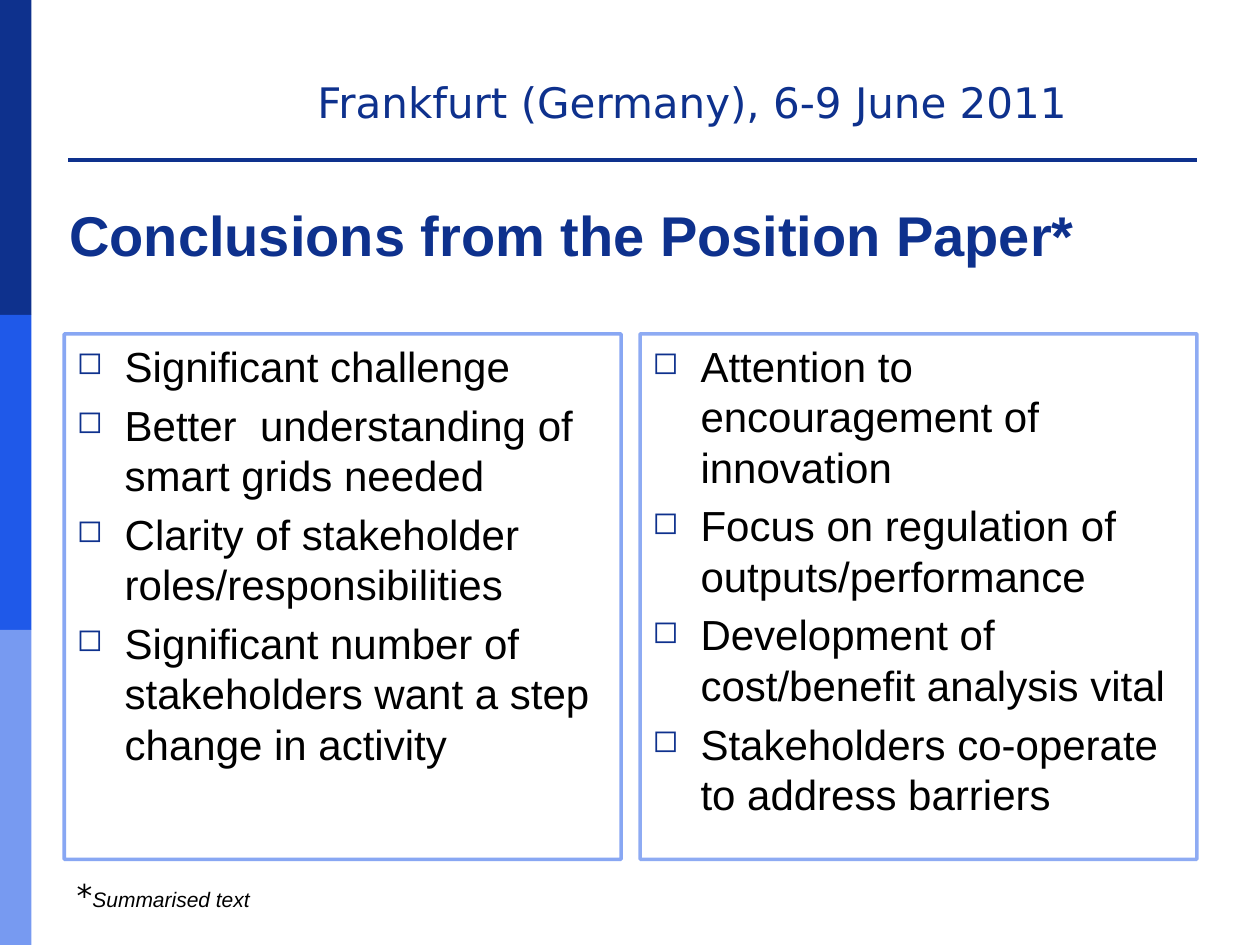
import dataclasses
import typing

import lxml.etree
import pptx
import pptx.dml.color
import pptx.enum.shapes
import pptx.enum.text
import pptx.oxml.ns
import pptx.util

WIDTH, HEIGHT = 10, 7.5
NAVY, BLUE, SKY, BLACK = "0E318D", "1F59E9", "779AF1", "000000"
SANS, WIDE, SYMBOL = "Arial", "DejaVu Sans", "OpenSymbol"
BAR_WIDTH = WIDTH / 40
LEFT, GUTTER = 0.51, 0.15
PANEL_TOP, PANEL_WIDTH, PANEL_HEIGHT = 2.65, 4.42, 4.17
INDENT = 0.38


@dataclasses.dataclass
class Box:
    left: float
    top: float
    width: float
    height: float

    def emu(self) -> list[int]:
        return [pptx.util.Inches(v) for v in dataclasses.astuple(self)]


@dataclasses.dataclass
class Run:
    text: str
    size: float
    font: str = SANS
    color: str = BLACK
    bold: bool = False
    italic: bool = False


@dataclasses.dataclass
class Panel:
    column: int
    opacity: int
    items: list[str]


PANELS = [
    Panel(0, 52, [
        "Significant challenge",
        "Better  understanding of smart grids needed",
        "Clarity of stakeholder roles/responsibilities",
        "Significant number of stakeholders want a step change in activity",
    ]),
    Panel(1, 50, [
        "Attention to encouragement of innovation",
        "Focus on regulation of outputs/performance",
        "Development of cost/benefit analysis vital",
        "Stakeholders co-operate to address barriers",
    ]),
]


def rgb(color: str) -> pptx.dml.color.RGBColor:
    return pptx.dml.color.RGBColor.from_string(color)


def add_xml(parent: typing.Any, tag: str, **attrs: str) -> typing.Any:
    return lxml.etree.SubElement(parent, pptx.oxml.ns.qn(tag), attrs)


def add_run(p: typing.Any, run: Run) -> None:
    r = p.add_run()
    r.text = run.text
    r.font.size = pptx.util.Pt(run.size)
    r.font.name = run.font
    r.font.color.rgb = rgb(run.color)
    r.font.bold, r.font.italic = run.bold, run.italic


def place(sp: typing.Any, box: Box) -> None:
    sp.left, sp.top, sp.width, sp.height = box.emu()


def add_bar(s: typing.Any, row: int, color: str) -> None:
    box = Box(0, row * HEIGHT / 3, BAR_WIDTH, HEIGHT / 3)
    sp = s.shapes.add_shape(pptx.enum.shapes.MSO_SHAPE.RECTANGLE, *box.emu())
    sp.shadow.inherit = False
    sp.fill.solid()
    sp.fill.fore_color.rgb = rgb(color)
    sp.line.fill.background()


def add_rule_table(s: typing.Any, box: Box) -> None:
    """Add a one-cell table that shows only its bottom border."""
    table = s.shapes.add_table(1, 1, *box.emu()).table
    table.first_row = table.horz_banding = False
    cell = table.cell(0, 0)
    cell.margin_top = cell.margin_bottom = 0
    add_xml(cell.text_frame.paragraphs[0]._p, "a:endParaRPr", sz="800")
    tcPr = cell._tc.get_or_add_tcPr()
    for side in ("L", "R", "T"):
        add_xml(add_xml(tcPr, f"a:ln{side}", w="0"), "a:noFill")
    bottom = add_xml(tcPr, "a:lnB", w=str(pptx.util.Pt(2.25)))
    add_xml(add_xml(bottom, "a:solidFill"), "a:srgbClr", val=NAVY)
    cell.fill.background()


def add_text(s: typing.Any, box: Box, runs: list[Run]) -> None:
    tf = s.shapes.add_textbox(*box.emu()).text_frame
    tf.word_wrap = True
    tf.auto_size = pptx.enum.text.MSO_AUTO_SIZE.SHAPE_TO_FIT_TEXT
    for run in runs:
        add_run(tf.paragraphs[0], run)


def fill_title(sp: typing.Any, box: Box, run: Run) -> None:
    place(sp, box)
    tf = sp.text_frame
    tf.auto_size = pptx.enum.text.MSO_AUTO_SIZE.NONE
    tf.vertical_anchor = pptx.enum.text.MSO_ANCHOR.MIDDLE
    p = tf.paragraphs[0]
    p.alignment = pptx.enum.text.PP_ALIGN.LEFT
    add_run(p, run)


def add_bullet(p: typing.Any) -> None:
    pPr = p._p.get_or_add_pPr()
    pPr.set("marL", str(pptx.util.Inches(INDENT)))
    pPr.set("indent", str(-pptx.util.Inches(INDENT)))
    add_xml(add_xml(pPr, "a:buClr"), "a:srgbClr", val=NAVY)
    add_xml(pPr, "a:buSzPct", val="75000")
    add_xml(pPr, "a:buFont", typeface=SYMBOL)
    add_xml(pPr, "a:buChar", char="◻")


def fill_panel(sp: typing.Any, panel: Panel) -> None:
    left = LEFT + panel.column * (PANEL_WIDTH + GUTTER)
    place(sp, Box(left, PANEL_TOP, PANEL_WIDTH, PANEL_HEIGHT))
    sp.line.color.rgb = rgb(BLUE)
    sp.line.width = pptx.util.Pt(2)
    color = sp.line._ln.find(".//" + pptx.oxml.ns.qn("a:srgbClr"))
    add_xml(color, "a:alpha", val=str(panel.opacity * 1000))
    tf = sp.text_frame
    tf.auto_size = pptx.enum.text.MSO_AUTO_SIZE.NONE
    for i, item in enumerate(panel.items):
        p = tf.add_paragraph() if i else tf.paragraphs[0]
        add_bullet(p)
        p.space_before = pptx.util.Pt(4.8 if i else 0)
        add_run(p, Run(item, 24))


def main() -> None:
    prs = pptx.Presentation()
    prs.slide_width = pptx.util.Inches(WIDTH)
    prs.slide_height = pptx.util.Inches(HEIGHT)
    s = prs.slides.add_slide(prs.slide_layouts[3])
    title, *bodies = s.placeholders

    for row, color in enumerate((NAVY, BLUE, SKY)):
        add_bar(s, row, color)
    add_rule_table(s, Box(0.54, 1.07, 8.96, 0.2))
    add_text(s, Box(2.42, 0.56, 6.58, 0.5),
             [Run("Frankfurt (Germany), 6-9 June 2011", 24, WIDE, NAVY)])
    fill_title(title, Box(0.45, 1.31, 9, 1.1),
               Run("Conclusions from the Position Paper*", 32, color=NAVY, bold=True))
    for sp, panel in zip(bodies, PANELS):
        fill_panel(sp, panel)
    add_text(s, Box(LEFT, 6.9, 3.31, 0.4),
             [Run("*", 18, WIDE, italic=True), Run("Summarised text", 12, italic=True)])
    prs.save("out.pptx")


if __name__ == "__main__":
    main()
